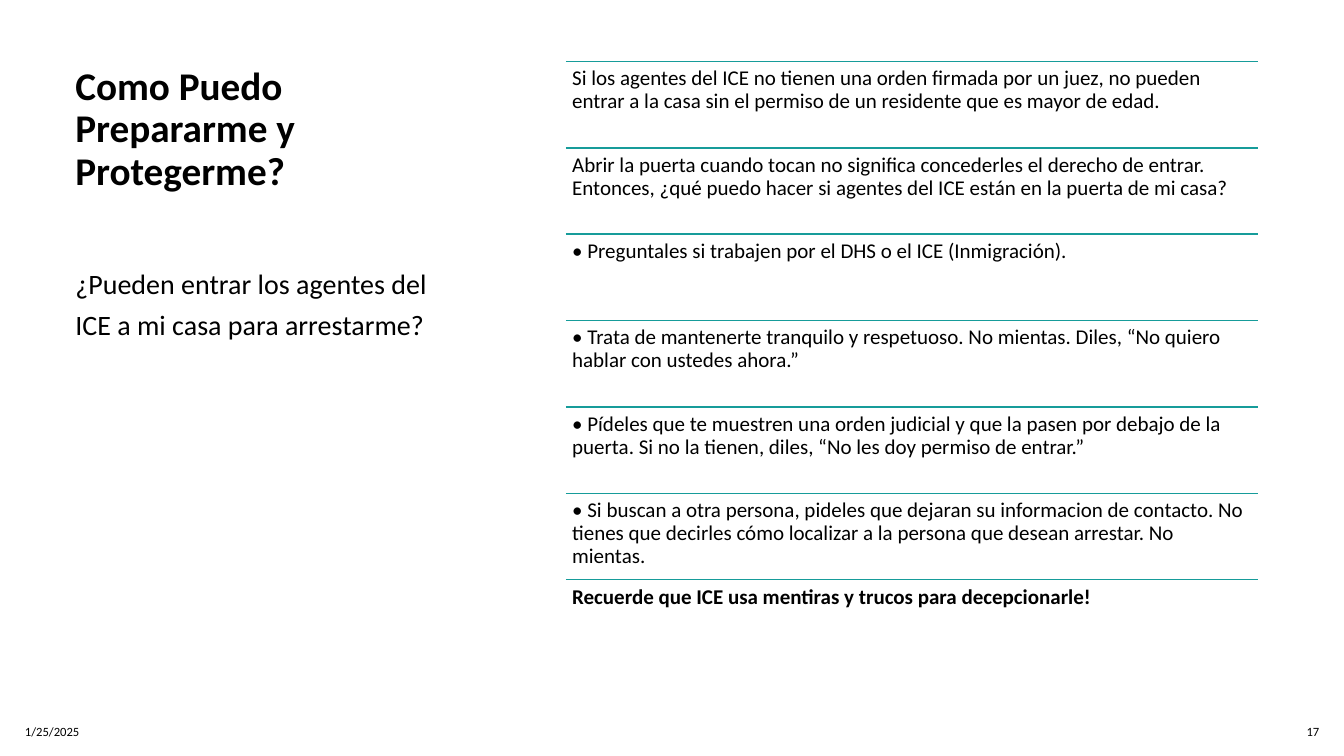
from lxml import etree
from pptx import Presentation
from pptx import util as u
from pptx.dml.color import RGBColor
from pptx.enum import shapes, text
from pptx.oxml import ns

BLACK = RGBColor(0x00, 0x00, 0x00)
TEAL = RGBColor(0x16, 0x9C, 0x9A)

ADVICE_LEFT, ADVICE_TOP = 14.26, 1.55
ADVICE_WIDTH, ADVICE_HEIGHT = 17.44, 15.23
ADVICE = [
    "Si los agentes del ICE no tienen una orden firmada por un juez, no pueden "
    "entrar a la casa sin el permiso de un residente que es mayor de edad.",
    "Abrir la puerta cuando tocan no significa concederles el derecho de entrar. "
    "Entonces, ¿qué puedo hacer si agentes del ICE están en la puerta de mi casa?",
    "• Preguntales si trabajen por el DHS o el ICE (Inmigración).",
    "• Trata de mantenerte tranquilo y respetuoso. No mientas. Diles, “No quiero "
    "hablar con ustedes ahora.”",
    "• Pídeles que te muestren una orden judicial y que la pasen por debajo de la "
    "puerta. Si no la tienen, diles, “No les doy permiso de entrar.”",
    "• Si buscan a otra persona, pideles que dejaran su informacion de contacto. No "
    "tienes que decirles cómo localizar a la persona que desean arrestar. No mientas.",
    "Recuerde que ICE usa mentiras y trucos para decepcionarle!",
]


class SlideBuilder:
    font = "Calibri"
    ink = BLACK
    rule_color = TEAL
    rule_width = u.Pt(1)

    def __init__(self, page):
        self.page = page

    def add_words(self, words, left, top, width, height, size, bold=False,
                  spacing=1.0, before=0, after=0, inset=None,
                  align=text.PP_ALIGN.LEFT, anchor=text.MSO_ANCHOR.TOP):
        box = self.page.shapes.add_textbox(
            u.Cm(left), u.Cm(top), u.Cm(width), u.Cm(height))
        frame = box.text_frame
        frame.text = words
        frame.word_wrap = True
        frame.vertical_anchor = anchor
        if inset is not None:
            frame.margin_left = frame.margin_right = u.Cm(inset)
            frame.margin_top = frame.margin_bottom = u.Cm(inset)
        para = frame.paragraphs[0]
        para.alignment = align
        para.line_spacing = spacing
        para.space_before = u.Pt(before)
        para.space_after = u.Pt(after)
        span = para.runs[0]
        span.font.name = self.font
        span.font.size = u.Pt(size)
        span.font.bold = bold
        span.font.color.rgb = self.ink

    def add_rule(self, left, top, width):
        line = self.page.shapes.add_connector(
            shapes.MSO_CONNECTOR.STRAIGHT,
            u.Cm(left), u.Cm(top), u.Cm(left + width), u.Cm(top))
        line.line.color.rgb = self.rule_color
        line.line.width = self.rule_width
        etree.SubElement(line._element.spPr, ns.qn("a:effectLst"))


def main():
    deck = Presentation()
    deck.slide_width = u.Cm(33.87)
    deck.slide_height = u.Cm(19.05)
    builder = SlideBuilder(deck.slides.add_slide(deck.slide_layouts[6]))

    builder.add_words("Como Puedo Prepararme y Protegerme?",
                      1.65, 1.55, 9.98, 4.88, 28, bold=True, spacing=0.9)
    builder.add_words("¿Pueden entrar los agentes del ICE a mi casa para arrestarme?",
                      1.65, 6.43, 9.98, 10.36, 20, spacing=1.2, before=10)
    builder.add_words("1/25/2025", 0.38, 17.93, 9.7, 1.02, 9, after=6,
                      anchor=text.MSO_ANCHOR.MIDDLE)
    builder.add_words("17", 32.31, 17.93, 1.19, 1.02, 9, after=6,
                      align=text.PP_ALIGN.RIGHT, anchor=text.MSO_ANCHOR.MIDDLE)

    row_height = ADVICE_HEIGHT / len(ADVICE)
    for index, advice in enumerate(ADVICE):
        top = ADVICE_TOP + index * row_height
        builder.add_rule(ADVICE_LEFT, top, ADVICE_WIDTH)
        builder.add_words(advice, ADVICE_LEFT, top, ADVICE_WIDTH, row_height, 15,
                          bold=advice == ADVICE[-1], spacing=0.9, inset=0.16)

    deck.save("out.pptx")


if __name__ == "__main__":
    main()
